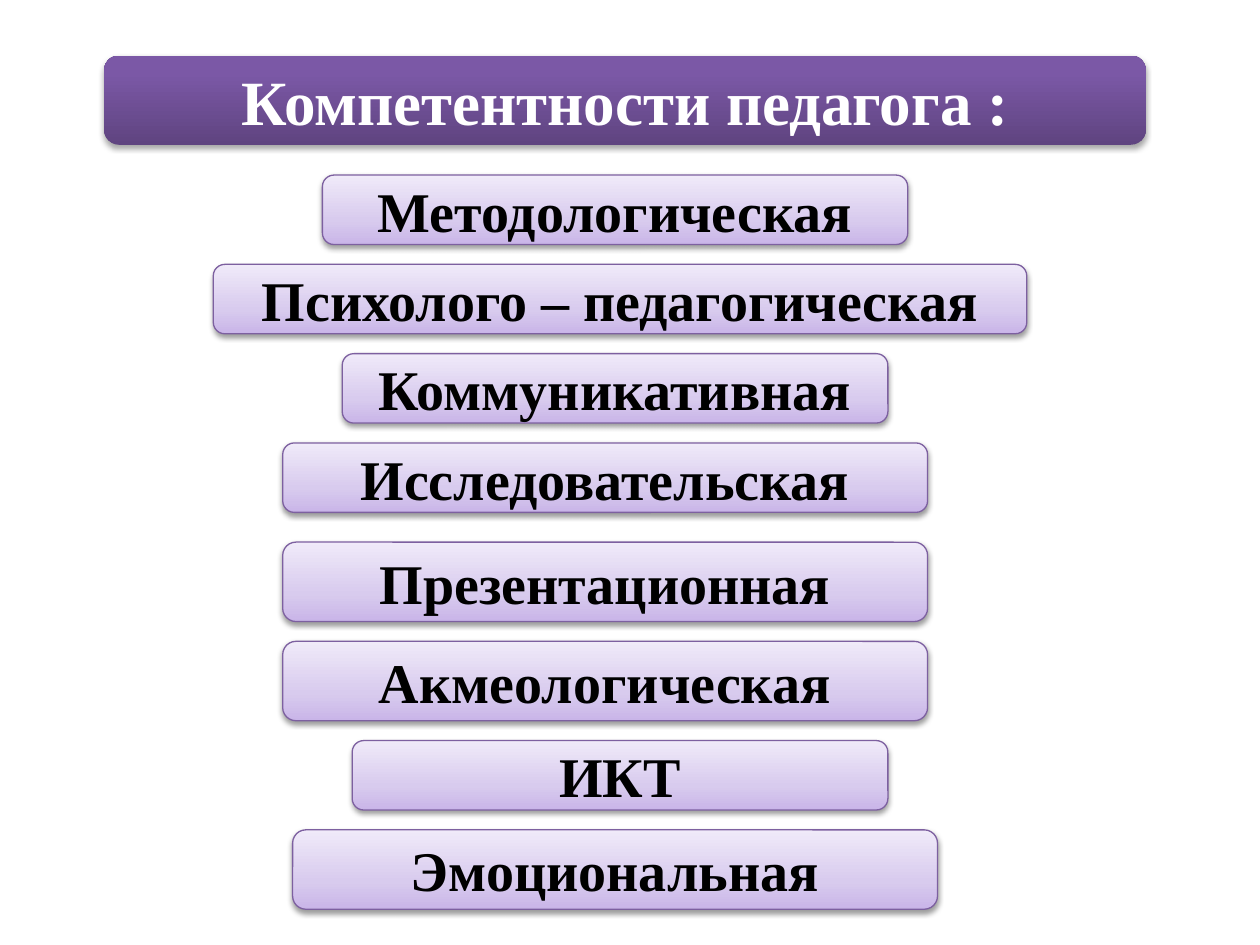
from lxml import etree
from pptx import Presentation
from pptx import util as u
from pptx.dml.color import RGBColor
from pptx.enum import shapes, text
from pptx.oxml.ns import qn

FONT = "Times New Roman"
TITLE = "Компетентности педагога :"
TITLE_BOX = (2.1, 1.12, 21, 1.8)
TITLE_STOPS = [(0, "5F4480"), (80, "7B58A6"), (100, "7C57A8")]
BAR_STOPS = [(0, "C9B5E8"), (35, "D8CBEE"), (100, "F0EAF9")]
BAR_LINE = "7D60A0"

LIST_TOP = 3.53
GAP = 0.4
# Label, left, width, height, extra space above (cm)
COMPETENCES = [
    ("Методологическая", 6.5, 11.8, 1.4, 0),
    ("Психолого – педагогическая", 4.3, 16.4, 1.4, 0),
    ("Коммуникативная", 6.9, 11, 1.4, 0),
    ("Исследовательская", 5.7, 13, 1.4, 0),
    ("Презентационная", 5.7, 13, 1.6, 0.2),
    ("Акмеологическая", 5.7, 13, 1.6, 0),
    ("ИКТ", 7.1, 10.8, 1.4, 0),
    ("Эмоциональная", 5.9, 13, 1.6, 0),
]


def color(value):
    return RGBColor.from_string(value)


def add_color(parent, value):
    return etree.SubElement(parent, qn("a:srgbClr"), val=value)


def set_gradient(shape, stops):
    """Fill from bottom to top with the given (percent, colour) stops."""
    shape.fill.gradient()
    shape.fill.gradient_angle = 90
    stop_list = shape._element.spPr.find(".//" + qn("a:gsLst"))
    for stop in list(stop_list):
        stop_list.remove(stop)
    for percent, value in stops:
        stop = etree.SubElement(stop_list, qn("a:gs"), pos=str(percent * 1000))
        add_color(stop, value)


def set_shadow(shape, opacity, distance):
    shape.shadow.inherit = False
    effects = shape._element.spPr.find(qn("a:effectLst"))
    shadow = etree.SubElement(
        effects, qn("a:outerShdw"), blurRad=str(u.Pt(3.1)),
        dist=str(u.Pt(distance)), dir="5400000", rotWithShape="0")
    etree.SubElement(add_color(shadow, "000000"), qn("a:alpha"),
                     val=str(opacity * 1000))


def write_text(shape, words, size, font_color):
    frame = shape.text_frame
    frame_format = {"word_wrap": True, "auto_size": text.MSO_AUTO_SIZE.NONE,
                    "vertical_anchor": text.MSO_ANCHOR.MIDDLE}
    for name, value in frame_format.items():
        setattr(frame, name, value)
    paragraph = frame.paragraphs[0]
    paragraph.text = words
    paragraph.alignment = text.PP_ALIGN.CENTER
    font = paragraph.runs[0].font
    for name, value in {"name": FONT, "size": u.Pt(size), "bold": True}.items():
        setattr(font, name, value)
    font.color.rgb = color(font_color)


def add_bar(slide, box, stops, opacity, distance):
    bar = slide.shapes.add_shape(
        shapes.MSO_SHAPE.ROUNDED_RECTANGLE, *(u.Cm(length) for length in box))
    set_gradient(bar, stops)
    bar.line.fill.background()
    set_shadow(bar, opacity, distance)
    return bar


def add_title(slide, box):
    # Banner behind the title placeholder
    banner = add_bar(slide, box, TITLE_STOPS, 35, 1.8)
    title = slide.shapes.title
    banner._element.getparent().insert(2, banner._element)
    for name, length in zip(("left", "top", "width", "height"), box):
        setattr(title, name, u.Cm(length))
    write_text(title, TITLE, 36, "FFFFFF")


def add_competences(slide, top):
    for label, left, width, height, extra in COMPETENCES:
        top += extra
        bar = add_bar(slide, (left, top, width, height), BAR_STOPS, 38, 1.6)
        bar.line.color.rgb = color(BAR_LINE)
        bar.line.width = u.Pt(0.75)
        write_text(bar, label, 32, "000000")
        top += height + GAP


def main():
    presentation = Presentation()
    presentation.slide_width = u.Cm(25.4)
    presentation.slide_height = u.Cm(19.05)
    slide = presentation.slides.add_slide(presentation.slide_layouts[5])
    add_title(slide, TITLE_BOX)
    add_competences(slide, LIST_TOP)
    presentation.save("out.pptx")


if __name__ == "__main__":
    main()
